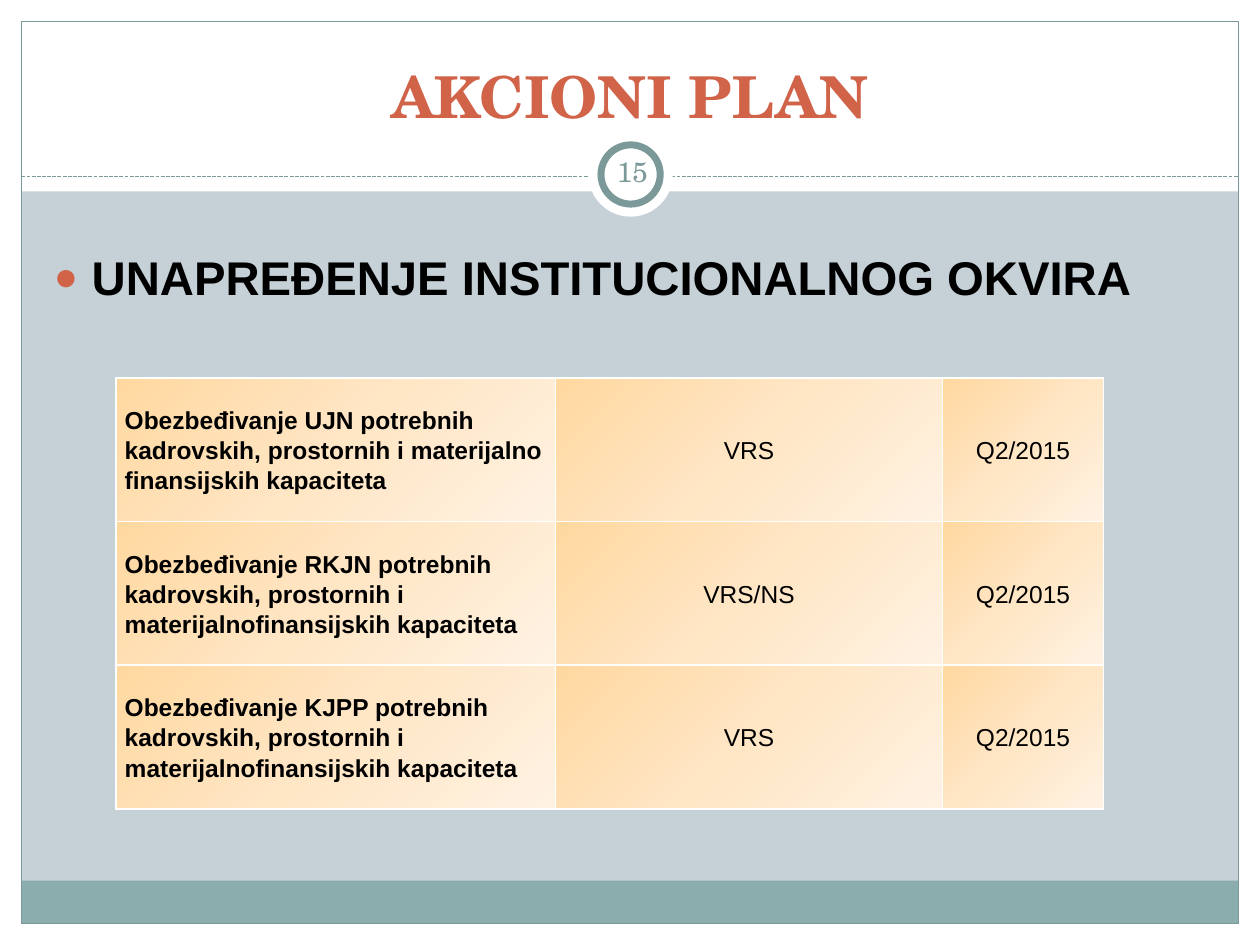
from dataclasses import dataclass

from lxml import etree
from pptx import Presentation
from pptx.dml.color import RGBColor
from pptx.enum.dml import MSO_LINE
from pptx.enum.shapes import MSO_CONNECTOR, MSO_SHAPE
from pptx.enum.text import MSO_ANCHOR, PP_ALIGN
from pptx.oxml.ns import qn
from pptx.util import Inches, Pt


@dataclass(frozen=True)
class Theme:
    background: str = "C5D1D7"
    white: str = "FFFFFF"
    band: str = "8CADAE"
    line: str = "7C999A"
    accent: str = "D16349"
    text: str = "000000"
    cell_stops: tuple = ((0, "FFD8A0"), (50, "FFE6C5"), (100, "FFF2E3"))
    serif: str = "TeX Gyre Schola"
    sans: str = "Arial"
    title_size: float = 33
    heading_size: float = 27
    number_size: float = 16
    cell_size: float = 14


THEME = Theme()
COLUMNS = (3.49, 3.07, 1.28)
TASKS = (
    ("Obezbeđivanje UJN potrebnih kadrovskih, prostornih i materijalno finansijskih kapaciteta",
     "VRS", "Q2/2015"),
    ("Obezbeđivanje RKJN potrebnih kadrovskih, prostornih i materijalnofinansijskih kapaciteta",
     "VRS/NS", "Q2/2015"),
    ("Obezbeđivanje KJPP potrebnih kadrovskih, prostornih i materijalnofinansijskih kapaciteta",
     "VRS", "Q2/2015"),
)


def rgb(value):
    return RGBColor.from_string(value)


def add_child(parent, tag, **attrs):
    return etree.SubElement(parent, qn(tag), attrs)


def add_panel(s, box, fill=None, line=None, width=0.75, kind=MSO_SHAPE.RECTANGLE):
    sp = s.shapes.add_shape(kind, *map(Inches, box))
    sp.shadow.inherit = False
    if fill:
        sp.fill.solid()
        sp.fill.fore_color.rgb = rgb(fill)
    else:
        sp.fill.background()
    if line:
        sp.line.color.rgb = rgb(line)
        sp.line.width = Pt(width)
    else:
        sp.line.fill.background()


def write(tf, text, size, font, color, bold=False, align=PP_ALIGN.LEFT):
    tf.word_wrap = True
    p = tf.paragraphs[0]
    p.text = text
    p.alignment = align
    f = p.runs[0].font
    f.size, f.name, f.bold = Pt(size), font, bold
    f.color.rgb = rgb(color)
    return p


def add_frame(s, width, height):
    """White margins and header, footer band, outline and dashed rule."""
    m, header = 0.17, 1.52
    for box in ((0, height - m, width, m), (0, 0, width, header),
                (0, 0, m, height), (width - m, 0, m, height)):
        add_panel(s, box, THEME.white)
    add_panel(s, (m, 6.99, width - 2 * m, 0.34), THEME.band)
    add_panel(s, (m, m, width - 2 * m, height - 2 * m), line=THEME.line)
    rule = s.shapes.add_connector(MSO_CONNECTOR.STRAIGHT, Inches(m), Inches(1.4),
                                  Inches(width - m), Inches(1.4))
    rule.line.color.rgb = rgb(THEME.line)
    rule.line.width = Pt(0.75)
    rule.line.dash_style = MSO_LINE.SQUARE_DOT
    add_child(rule.element.spPr, "a:effectLst")


def add_page_badge(s, box, number):
    left, top, size, _ = box
    inset = 0.1
    add_panel(s, box, THEME.white, kind=MSO_SHAPE.OVAL)
    ring = size - 2 * inset
    add_panel(s, (left + inset, top + inset, ring, ring), THEME.white,
              THEME.line, 4, MSO_SHAPE.OVAL)
    label = (left + inset, top + 0.07, 0.5, 0.48)
    tf = s.shapes.add_textbox(*map(Inches, label)).text_frame
    tf.margin_left = tf.margin_right = tf.margin_top = tf.margin_bottom = Inches(0.05)
    tf.vertical_anchor = MSO_ANCHOR.MIDDLE
    write(tf, number, THEME.number_size, THEME.serif, THEME.line, align=PP_ALIGN.CENTER)


def add_title(s, box, text):
    tf = s.shapes.add_textbox(*map(Inches, box)).text_frame
    tf.vertical_anchor = MSO_ANCHOR.BOTTOM
    write(tf, text, THEME.title_size, THEME.serif, THEME.accent, True, PP_ALIGN.CENTER)


def add_bullet_heading(s, box, text):
    tf = s.shapes.add_textbox(*map(Inches, box)).text_frame
    p = write(tf, text, THEME.heading_size, THEME.sans, THEME.text, True)
    p.space_before = Pt(THEME.heading_size * 0.2)
    pPr = p._p.get_or_add_pPr()
    pPr.set("marL", str(Inches(0.3)))
    pPr.set("indent", str(Inches(-0.3)))
    add_child(add_child(pPr, "a:buClr"), "a:srgbClr", val=THEME.accent)
    add_child(pPr, "a:buSzPct", val="85000")
    add_child(pPr, "a:buFont", typeface=THEME.sans)
    add_child(pPr, "a:buChar", char="●")


def style_cell(cell):
    """White borders and a diagonal three-stop gradient."""
    tcPr = cell._tc.get_or_add_tcPr()
    for side in "LRTB":
        ln = add_child(tcPr, f"a:ln{side}", w=str(Pt(1)))
        add_child(add_child(ln, "a:solidFill"), "a:srgbClr", val=THEME.white)
    grad = add_child(tcPr, "a:gradFill", rotWithShape="1")
    stops = add_child(grad, "a:gsLst")
    for percent, color in THEME.cell_stops:
        stop = add_child(stops, "a:gs", pos=str(percent * 1000))
        add_child(stop, "a:srgbClr", val=color)
    add_child(grad, "a:lin", ang=str(45 * 60000), scaled="0")


def add_task_table(s, box, rows):
    table = s.shapes.add_table(len(rows), len(COLUMNS), *map(Inches, box)).table
    table.first_row = table.horz_banding = False
    for column, width in zip(table.columns, COLUMNS):
        column.width = Inches(width)
    for r, row in enumerate(rows):
        for c, text in enumerate(row):
            cell = table.cell(r, c)
            cell.vertical_anchor = MSO_ANCHOR.MIDDLE
            cell.margin_left = cell.margin_right = Inches(0.07)
            cell.margin_top = cell.margin_bottom = 0
            p = write(cell.text_frame, text, THEME.cell_size, THEME.sans, THEME.text,
                      c == 0, PP_ALIGN.CENTER if c else PP_ALIGN.LEFT)
            p.line_spacing = 1.1
            p.space_before = p.space_after = Pt(2.9)
            style_cell(cell)


def main():
    width, height = 10, 7.5
    prs = Presentation()
    prs.slide_width, prs.slide_height = Inches(width), Inches(height)
    s = prs.slides.add_slide(prs.slide_layouts[6])
    s.background.fill.solid()
    s.background.fill.fore_color.rgb = rgb(THEME.background)
    add_frame(s, width, height)
    add_page_badge(s, (4.67, 1.05, 0.67, 0.67), "15")
    add_title(s, (0.33, 0.25, 9.33, 0.83), "AKCIONI PLAN")
    add_bullet_heading(s, (0.33, 1.92, 9.3, 0.6), "UNAPREĐENJE INSTITUCIONALNOG OKVIRA")
    add_task_table(s, (0.92, 3, sum(COLUMNS), 3.42), TASKS)
    prs.save("out.pptx")


if __name__ == "__main__":
    main()
